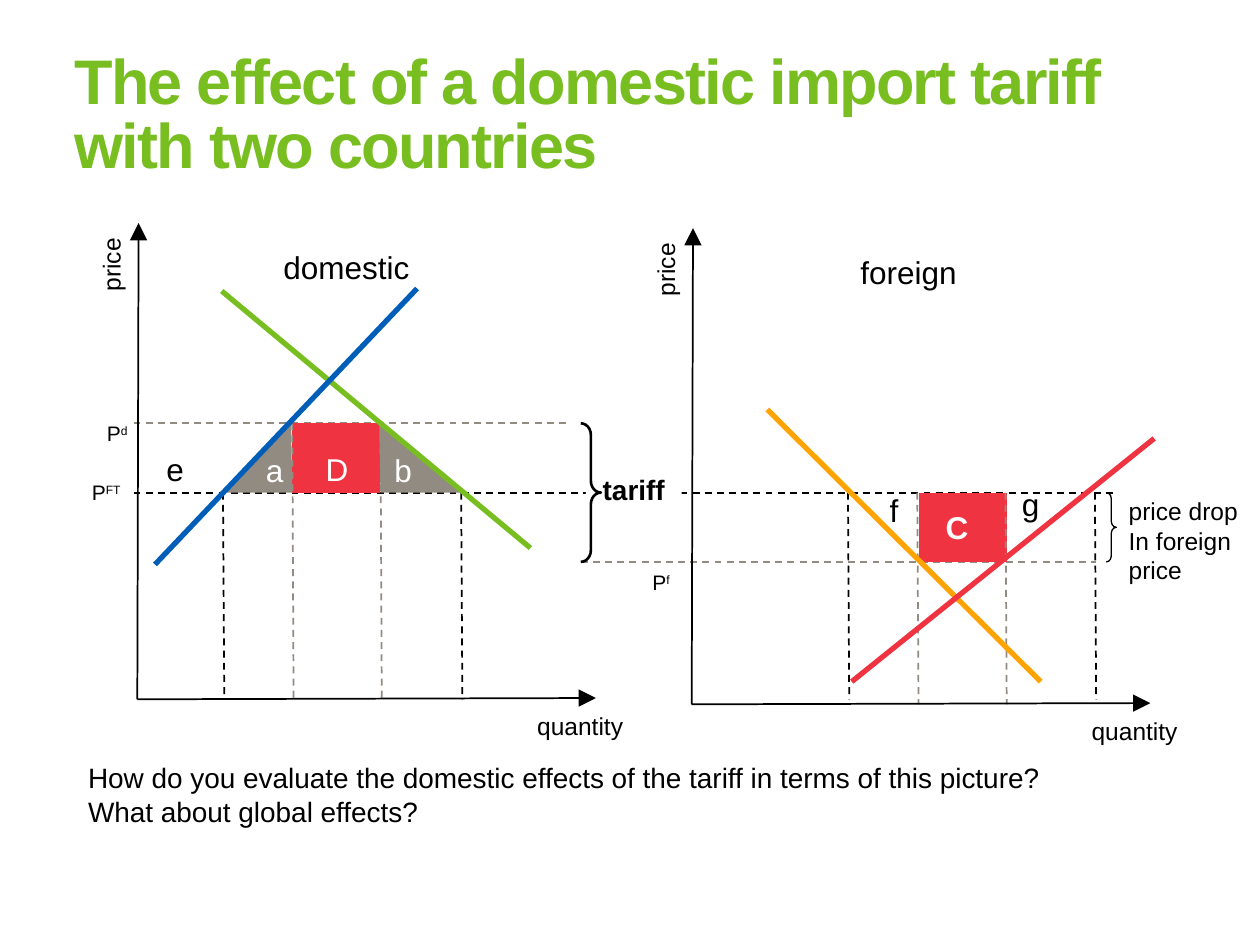
from lxml import etree
from pptx import Presentation
from pptx.dml.color import RGBColor
from pptx.enum.dml import MSO_LINE
from pptx.enum.shapes import MSO_CONNECTOR, MSO_SHAPE
from pptx.enum.text import PP_ALIGN
from pptx.oxml.ns import qn
from pptx.util import Inches, Pt

BLACK = RGBColor(0x00, 0x00, 0x00)
WHITE = RGBColor(0xFF, 0xFF, 0xFF)
GREEN = RGBColor(0x78, 0xBE, 0x20)
BLUE = RGBColor(0x00, 0x5E, 0xB8)
RED = RGBColor(0xEF, 0x33, 0x40)
AMBER = RGBColor(0xFF, 0xA3, 0x00)
GREY = RGBColor(0x92, 0x8B, 0x81)
LEFT, MID = PP_ALIGN.LEFT, PP_ALIGN.CENTER


def add_text(slide, box, text, size, color=BLACK, bold=False, align=LEFT, wrap=False, sup=""):
    shape = slide.shapes.add_textbox(*map(Inches, box))
    frame = shape.text_frame
    frame.text = text
    frame.word_wrap = wrap
    if sup:
        run = frame.paragraphs[0].add_run()
        run.text = sup
        run.font._element.set("baseline", "30000")
    for para in frame.paragraphs:
        para.alignment = align
        for run in para.runs:
            font = run.font
            font.name, font.size, font.bold = "Arial", Pt(size), bold
            font.color.rgb = color
    return shape


def add_line(slide, box, ends, color=BLACK, width=1, dash=False, arrow=False):
    x, y = box[:2]
    ax, ay, bx, by = ends
    line = slide.shapes.add_connector(
        MSO_CONNECTOR.STRAIGHT, Inches(x + ax), Inches(y + ay), Inches(x + bx), Inches(y + by))
    line.line.color.rgb = color
    line.line.width = Pt(width)
    if dash:
        line.line.dash_style = MSO_LINE.DASH
    if arrow:
        tail = etree.SubElement(line.line._get_or_add_ln(), qn("a:tailEnd"))
        for key, value in (("type", "triangle"), ("w", "lg"), ("len", "lg")):
            tail.set(key, value)
    etree.SubElement(line._element.spPr, qn("a:effectLst"))


def add_area(slide, box, points, color):
    spots = [(Inches(box[0] + px), Inches(box[1] + py)) for px, py in points]
    maker = slide.shapes.build_freeform(*spots[0])
    maker.add_line_segments(spots[1:], close=True)
    shape = maker.convert_to_shape()
    shape.shadow.inherit = False
    shape.fill.solid()
    shape.fill.fore_color.rgb = color
    shape.line.fill.background()


def add_brace(slide, box, bend, width):
    shape = slide.shapes.add_shape(MSO_SHAPE.RIGHT_BRACE, *map(Inches, box))
    shape.shadow.inherit = False
    shape.adjustments[0] = bend
    shape.fill.background()
    shape.line.color.rgb = BLACK
    shape.line.width = Pt(width)


def add_title(slide, box):
    shape = add_text(slide, box, "The effect of a domestic import tariff with two countries",
                     36, GREEN, True, wrap=True)
    frame = shape.text_frame
    frame.margin_left = frame.margin_right = frame.margin_top = frame.margin_bottom = 0
    para = frame.paragraphs[0]
    para.line_spacing = 0.85
    para.runs[0].font._element.set("spc", "-100")


def add_prices(slide, box):
    x, y, w, h = box
    half = h / 2
    add_line(slide, box, (0, half, w, half), dash=True)
    add_line(slide, box, (0, 0, 3.47, 0), GREY, dash=True)
    add_line(slide, box, (3.55, h, 7.64, h), GREY, dash=True)
    tag = add_text(slide, (x + 3.59, y + 0.34, 0.76, 0.37), "tariff", 16, bold=True, align=MID, wrap=True)
    tag.fill.solid()
    tag.fill.fore_color.rgb = WHITE
    add_brace(slide, (x + 3.55, y, 0.16, h), 0.58, 1.5)
    add_brace(slide, (x + 7.72, y + half, 0.08, half), 0.59, 0.75)
    for sup, dx, dy, wide in (("d", -0.31, -0.07, 0.38), ("FT", -0.43, 0.4, 0.45), ("f", 4.02, 1.11, 0.35)):
        add_text(slide, (x + dx, y + dy, wide, 0.3), "P", 12, sup=sup)
    add_text(slide, (x + 7.8, y + 0.53, 1.26, 0.81), "price drop\nIn foreign price", 14, wrap=True)


def add_axes(slide, box, name, shift, wide):
    x, y, w, h = box
    add_line(slide, box, (0, h, w, h - 0.01), arrow=True)
    add_line(slide, box, (0, h, 0.01, 0), arrow=True)
    add_text(slide, (x - 0.52, y + 0.16, 0.63, 0.34), "price", 14, align=MID).rotation = 270
    add_text(slide, (x + 3.07, y + 3.82, 0.89, 0.34), "quantity", 14, align=MID)
    add_text(slide, (x + shift, y + 0.15, wide, 0.4), name, 18)


def add_marks(slide, box, marks):
    for text, dx, dy, wide, color, bold in marks:
        add_text(slide, (box[0] + dx, box[1] + dy, wide, 0.4), text, 18, color, bold, MID)


def add_home(slide, box):
    h = box[3]
    top, low = 1.59, 2.14
    add_area(slide, box, [(1.23, top), (1.23, low), (1.93, low), (1.93, top)], RED)
    add_area(slide, box, [(1.92, top), (2.59, low), (1.93, low)], GREY)
    add_area(slide, box, [(1.22, top - 0.03), (1.23, low), (0.68, low)], GREY)
    for x in (0.68, 2.57):
        add_line(slide, box, (x, low, x + 0.01, h), dash=True)
    for x in (1.23, 1.93):
        add_line(slide, box, (x, top, x + 0.01, h), GREY, dash=True)
    add_marks(slide, box, [
        ("e", 0.13, 1.75, 0.34, BLACK, False), ("a", 0.92, 1.76, 0.34, WHITE, False),
        ("D", 1.39, 1.75, 0.39, WHITE, False), ("b", 1.94, 1.76, 0.34, WHITE, False)])
    add_axes(slide, box, "domestic", 1.06, 1.21)
    add_line(slide, box, (0.67, 0.54, 3.12, 2.58), GREEN, 3)
    add_line(slide, box, (0.14, 2.71, 2.22, 0.52), BLUE, 3)


def add_abroad(slide, box):
    h = box[3]
    top, low = 2.1, 2.65
    add_area(slide, box, [(1.8, top), (1.8, low), (2.5, low), (2.5, top)], RED)
    for x in (1.24, 3.2):
        add_line(slide, box, (x, top, x + 0.01, h - 0.04), dash=True)
    for x in (1.79, 2.49):
        add_line(slide, box, (x, top, x + 0.01, h), GREY, dash=True)
    add_axes(slide, box, "foreign", 1.24, 0.97)
    add_line(slide, box, (0.6, 1.44, 2.77, 3.6), AMBER, 3)
    add_line(slide, box, (1.27, 3.6, 3.67, 1.67), RED, 3)
    add_marks(slide, box, [
        ("f", 1.46, 2.04, 0.29, BLACK, False), ("C", 1.87, 2.17, 0.47, WHITE, True),
        ("g", 2.52, 1.99, 0.34, BLACK, False)])


def add_ask(slide, box):
    add_text(slide, box, "How do you evaluate the domestic effects of the tariff in terms of this picture?\n"
             "What about global effects?", 16, wrap=True)


def main():
    deck = Presentation()
    deck.slide_width, deck.slide_height = Inches(10), Inches(7.5)
    slide = deck.slides.add_slide(deck.slide_layouts[6])
    add_title(slide, (0.59, 0.42, 8.84, 1))
    add_prices(slide, (1.06, 3.36, 7.77, 1.1))
    add_home(slide, (1.09, 1.77, 3.64, 3.78))
    add_abroad(slide, (5.49, 1.81, 3.64, 3.78))
    add_ask(slide, (0.6, 5.99, 9.12, 0.64))
    deck.save("out.pptx")


if __name__ == "__main__":
    main()
